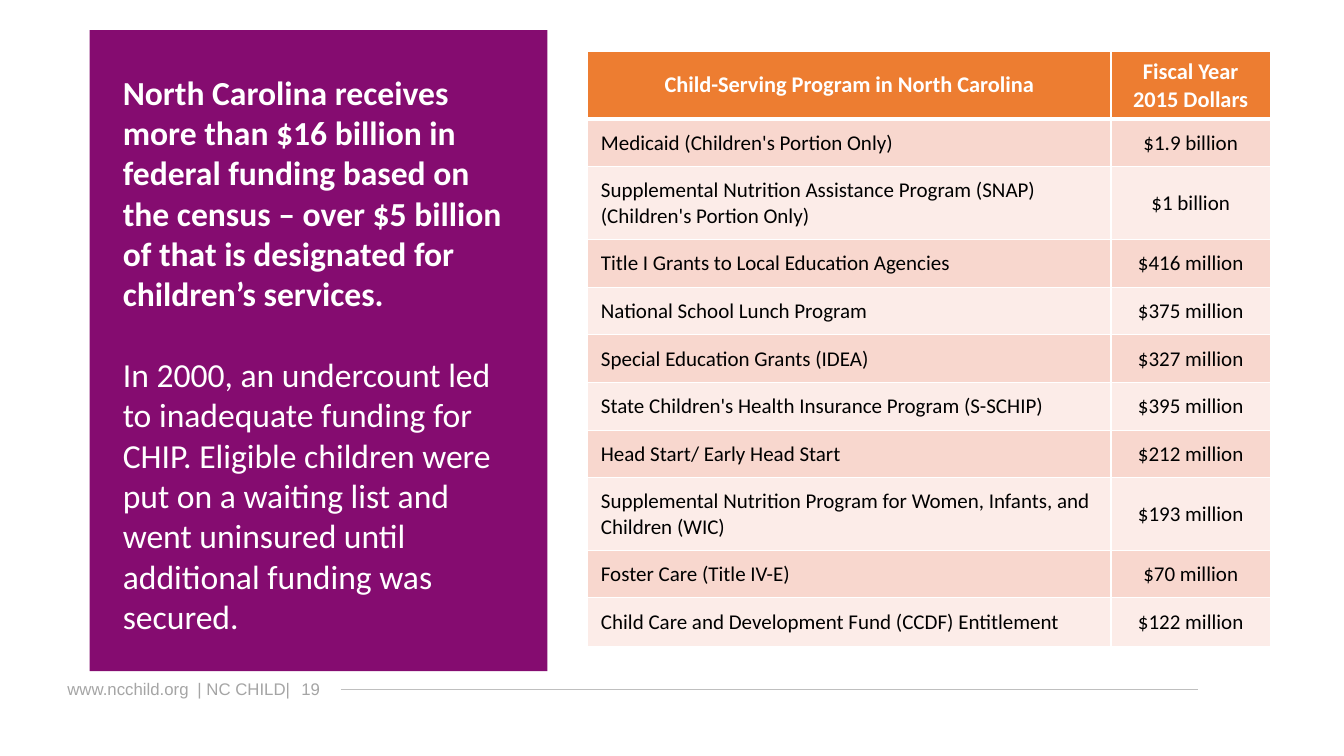
from lxml import etree
from pptx import Presentation
from pptx.dml.color import RGBColor
from pptx.enum.shapes import MSO_CONNECTOR, MSO_SHAPE
from pptx.enum.text import MSO_ANCHOR, PP_ALIGN
from pptx.oxml.ns import qn
from pptx.util import Inches, Pt

RECT = MSO_SHAPE.RECTANGLE
LINE = MSO_CONNECTOR.STRAIGHT
MIDDLE = MSO_ANCHOR.MIDDLE
LEFT, CENTER = PP_ALIGN.LEFT, PP_ALIGN.CENTER

ROWS = [
    ("Child-Serving Program in North Carolina", "Fiscal Year 2015 Dollars", 0.67),
    ("Medicaid (Children's Portion Only)", "$1.9 billion", 0.47),
    ("Supplemental Nutrition Assistance Program (SNAP) (Children's Portion Only)",
     "$1 billion", 0.72),
    ("Title I Grants to Local Education Agencies", "$416 million", 0.48),
    ("National School Lunch Program", "$375 million", 0.47),
    ("Special Education Grants (IDEA)", "$327 million", 0.47),
    ("State Children's Health Insurance Program (S-SCHIP)", "$395 million", 0.48),
    ("Head Start/ Early Head Start", "$212 million", 0.47),
    ("Supplemental Nutrition Program for Women, Infants, and Children (WIC)",
     "$193 million", 0.72),
    ("Foster Care (Title IV-E)", "$70 million", 0.47),
    ("Child Care and Development Fund (CCDF) Entitlement", "$122 million", 0.48),
]
CLAIMS = [
    ("North Carolina receives more than $16 billion in federal funding based on "
     "the census – over $5 billion of that is designated for children’s services.", True),
    ("In 2000, an undercount led to inadequate funding for CHIP. Eligible children "
     "were put on a waiting list and went uninsured until additional funding was "
     "secured.", False),
]


def color(code):
    return RGBColor.from_string(code)


def style(para, face, size, code, bold=False):
    font = para.font
    font.name, font.size, font.bold = face, Pt(size), bold
    font.color.rgb = color(code)


deck = Presentation()
deck.slide_width, deck.slide_height = Inches(13.33), Inches(7.5)
slide = deck.slides.add_slide(deck.slide_layouts[6])
shapes = slide.shapes

panel = shapes.add_shape(RECT, Inches(0.89), Inches(0.3), Inches(4.54), Inches(6.36))
panel.shadow.inherit = False
panel.fill.solid()
panel.fill.fore_color.rgb = color("850C70")
panel.line.fill.background()

footer = shapes.add_textbox(Inches(0.57), Inches(6.68), Inches(7.22), Inches(0.3))
footer.text_frame.word_wrap = True
para = footer.text_frame.paragraphs[0]
para.text = "www.ncchild.org\t| NC CHILD|\t19"
tabs = etree.SubElement(para._p.get_or_add_pPr(), qn("a:tabLst"))
for stop in (1.29, 2.32):
    etree.SubElement(tabs, qn("a:tab"), pos=str(Inches(stop)), algn="l")
style(para, "Arial", 12, "A5A5A5")

rule = shapes.add_connector(LINE, Inches(3.38), Inches(6.84), Inches(11.88), Inches(6.84))
rule.line.color.rgb = color("BFBFBF")
rule.line.width = Pt(0.75)
etree.SubElement(rule._element.spPr, qn("a:effectLst"))

story = shapes.add_textbox(Inches(1.12), Inches(0.66), Inches(4.07), Inches(3.51))
frame = story.text_frame
frame.word_wrap = True
for i, (text, bold) in enumerate(CLAIMS):
    para = frame.add_paragraph() if i else frame.paragraphs[0]
    para.text = text
    style(para, "Calibri", 24, "FFFFFF", bold)
    if i:
        para.space_before = Pt(29)

table = shapes.add_table(len(ROWS), 2, Inches(5.83), Inches(0.51),
                         Inches(6.77), Inches(5.9)).table
table.horz_banding = False
table.columns[0].width, table.columns[1].width = Inches(5.19), Inches(1.58)
for r, (program, amount, height) in enumerate(ROWS):
    table.rows[r].height = Inches(height)
    head = r == 0
    for c, text in enumerate((program, amount)):
        cell = table.cell(r, c)
        cell.text_frame.text = text
        cell.vertical_anchor = MIDDLE
        cell.margin_left = Inches(0.13 if head or c == 0 else 0.01)
        cell.margin_right = Inches(0.13 if head else 0.01)
        cell.margin_top = Inches(0.07 if head else 0.01)
        cell.margin_bottom = Inches(0.07 if head else 0)
        para = cell.text_frame.paragraphs[0]
        para.alignment = CENTER if head or c else LEFT
        style(para, "Calibri", 16 if head else 15, "FFFFFF" if head else "000000", head)
        for side in "LRTB":
            thick = (r, side) in ((0, "B"), (1, "T"))
            edge = etree.SubElement(cell._tc.get_or_add_tcPr(), qn("a:ln" + side),
                                    w=str(Pt(3 if thick else 1)))
            paint = etree.SubElement(edge, qn("a:solidFill"))
            etree.SubElement(paint, qn("a:srgbClr"), val="FFFFFF")
        cell.fill.solid()
        cell.fill.fore_color.rgb = color(
            "ED7D31" if head else "F8D7CE" if r % 2 else "FCECE8")

deck.save("out.pptx")
